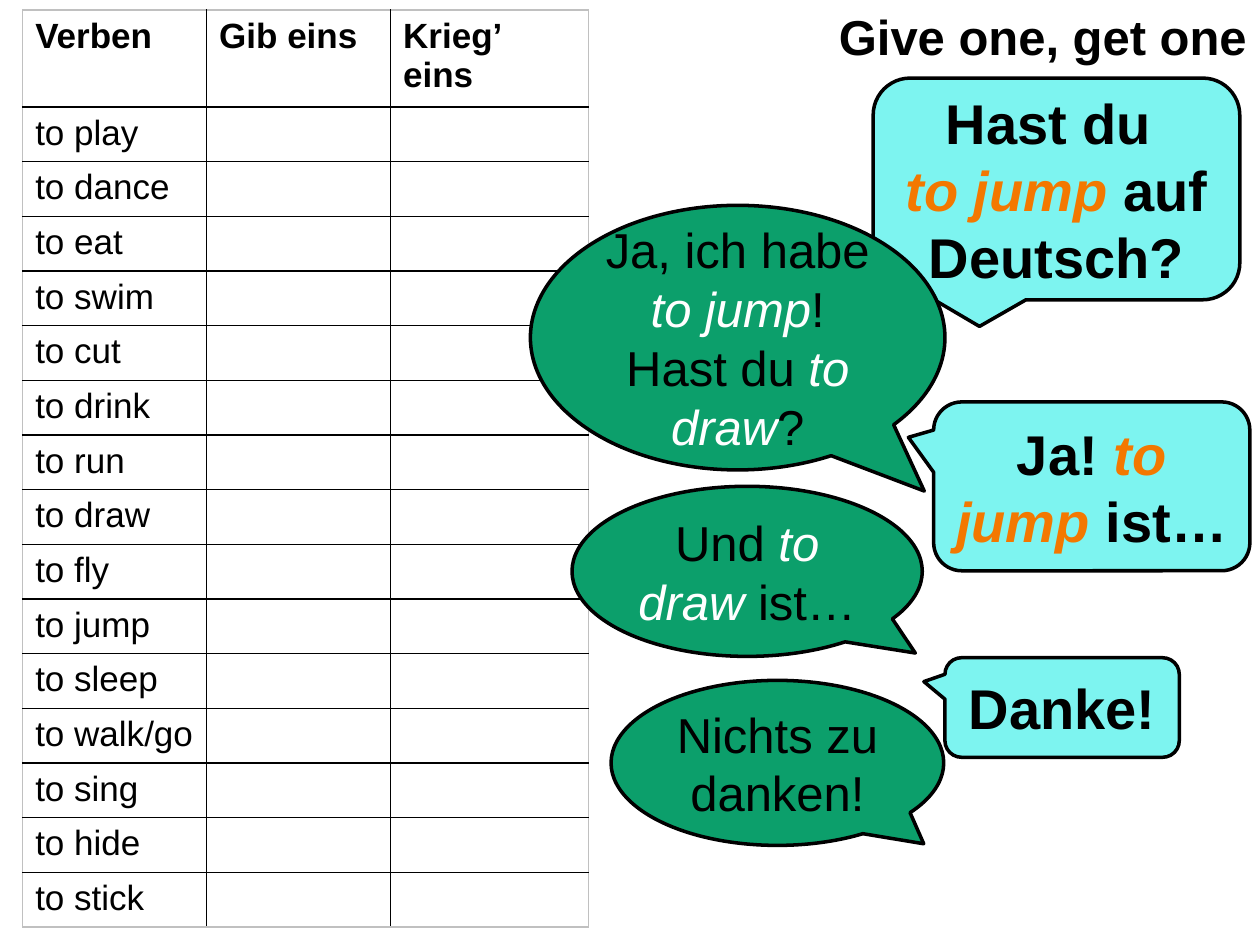
import pptx
import pptx.dml.color
import pptx.enum.shapes
import pptx.enum.text
import pptx.oxml
import pptx.oxml.ns
import pptx.util

# The slide is a grid of 100 columns by 75 rows; boxes are (left, top, width, height).
COLUMNS, ROWS = 100, 75
UNIT = pptx.util.Inches(10) // COLUMNS

FONT = "Arial"
BLACK, WHITE, ORANGE, GREY = "000000", "FFFFFF", "F37800", "C0C0C0"
AQUA, GREEN = "7DF4F0", "0C9F6B"

VERBS = ["play", "dance", "eat", "swim", "cut", "drink", "run", "draw", "fly",
         "jump", "sleep", "walk/go", "sing", "hide", "stick"]
HEADINGS = ["Verben", "Gib eins", "Krieg’ eins"]
COLUMN_WIDTHS = [14.6, 14.6, 15.7]
HEADER_ROWS = 7.7

# Speaker, box within the dialogue, tail tip, text parts (True marks the verb asked for)
BUBBLES = [
    ("asker", (32.1, 25.9, 25.1, 13.4), (-0.58, -0.29),
     [("Ja! ", False), ("to jump ", True), ("ist…", False)]),
    ("asker", (27.3, 0.2, 29.1, 17.6), (-0.21, 0.62),
     [("Hast du \n", False), ("to jump ", True), ("auf Deutsch?", False)]),
    ("partner", (0.1, 10.3, 32.9, 21), (0.45, 0.58),
     [("Ja, ich habe ", False), ("to jump", True), ("! Hast du ", False),
      ("to draw", True), ("?", False)]),
    ("partner", (3.4, 32.6, 27.8, 13.5), (0.48, 0.48),
     [("Und", False), (" to draw ", True), ("ist…", False)]),
    ("asker", (33, 46.2, 18.6, 7.9), (-0.59, -0.26), [("Danke! ", False)]),
    ("partner", (6.5, 48, 26.4, 13.1), (0.44, 0.49), [("Nichts zu danken!", False)]),
]
SHAPES = pptx.enum.shapes.MSO_SHAPE
# Shape, fill, verb colour, text size, bold
SPEAKERS = {
    "asker": (SHAPES.ROUNDED_RECTANGULAR_CALLOUT, AQUA, ORANGE, 32, True),
    "partner": (SHAPES.OVAL_CALLOUT, GREEN, WHITE, 28, False),
}


def grid(*lengths):
    return [pptx.util.Emu(round(length * UNIT)) for length in lengths]


def color(hex_value):
    return pptx.dml.color.RGBColor.from_string(hex_value)


def add_run(paragraph, text, size, bold=False, italic=False, hex_value=BLACK):
    """Add a run, turning a closing newline into a line break."""
    run = paragraph.add_run()
    run.text = text.rstrip("\n")
    run.font.name = FONT
    run.font.size = pptx.util.Pt(size)
    run.font.bold = bold
    run.font.italic = italic
    run.font.color.rgb = color(hex_value)
    if text.endswith("\n"):
        paragraph.add_line_break()


def add_title(slide, box):
    text_box = slide.shapes.add_textbox(*grid(*box))
    text_box.text_frame.word_wrap = False
    add_run(text_box.text_frame.paragraphs[0], "Give one, get one", 28, bold=True)


def set_borders(cell, edge_colors):
    """Draw the left, right, top and bottom edges, in that order."""
    properties = cell._tc.get_or_add_tcPr()
    for index, (side, hex_value) in enumerate(zip("LRTB", edge_colors)):
        properties.insert(index, pptx.oxml.parse_xml(
            f'<a:ln{side} {pptx.oxml.ns.nsdecls("a")} w="12700"><a:solidFill>'
            f'<a:srgbClr val="{hex_value}"/></a:solidFill></a:ln{side}>'))


def add_verb_table(slide, box):
    height = box[3]
    contents = [HEADINGS] + [[f"to {verb}", "", ""] for verb in VERBS]
    last_row, last_column = len(VERBS), len(HEADINGS) - 1
    table = slide.shapes.add_table(last_row + 1, last_column + 1, *grid(*box)).table
    for column, width in zip(table.columns, grid(*COLUMN_WIDTHS)):
        column.width = width
    verb_height = (height - HEADER_ROWS) / len(VERBS)
    for row, row_height in zip(table.rows, grid(HEADER_ROWS, *[verb_height] * len(VERBS))):
        row.height = row_height
    for i, texts in enumerate(contents):
        for j, text in enumerate(texts):
            cell = table.cell(i, j)
            cell.fill.background()
            outer_edges = (j == 0, j == last_column, i == 0, i == last_row)
            set_borders(cell, [GREY if outer else BLACK for outer in outer_edges])
            if text:
                add_run(cell.text_frame.paragraphs[0], text, 20, bold=i == 0)


def add_bubble(slide, box, speaker, tail, parts):
    kind, fill, verb_color, size, bold = SPEAKERS[speaker]
    bubble = slide.shapes.add_shape(kind, *grid(*box))
    bubble.shadow.inherit = False
    bubble.adjustments[0], bubble.adjustments[1] = tail
    bubble.fill.solid()
    bubble.fill.fore_color.rgb = color(fill)
    bubble.line.color.rgb = color(BLACK)
    bubble.line.width = pptx.util.Pt(2)
    frame = bubble.text_frame
    frame.word_wrap = True
    frame.vertical_anchor = pptx.enum.text.MSO_ANCHOR.MIDDLE
    paragraph = frame.paragraphs[0]
    paragraph.alignment = pptx.enum.text.PP_ALIGN.CENTER
    for text, is_verb in parts:
        add_run(paragraph, text, size, bold, is_verb, verb_color if is_verb else BLACK)


def add_dialogue(slide, box):
    left, top = box[:2]
    for speaker, (x, y, width, height), tail, parts in BUBBLES:
        add_bubble(slide, (left + x, top + y, width, height), speaker, tail, parts)


def main():
    presentation = pptx.Presentation()
    presentation.slide_width, presentation.slide_height = grid(COLUMNS, ROWS)
    slide = presentation.slides.add_slide(presentation.slide_layouts[6])
    add_title(slide, (65.6, 0, 34.4, 5.7))
    add_verb_table(slide, (1.8, 0.8, sum(COLUMN_WIDTHS), 72.8))
    add_dialogue(slide, (42, 6, 58, 62))
    presentation.save("out.pptx")


if __name__ == "__main__":
    main()
